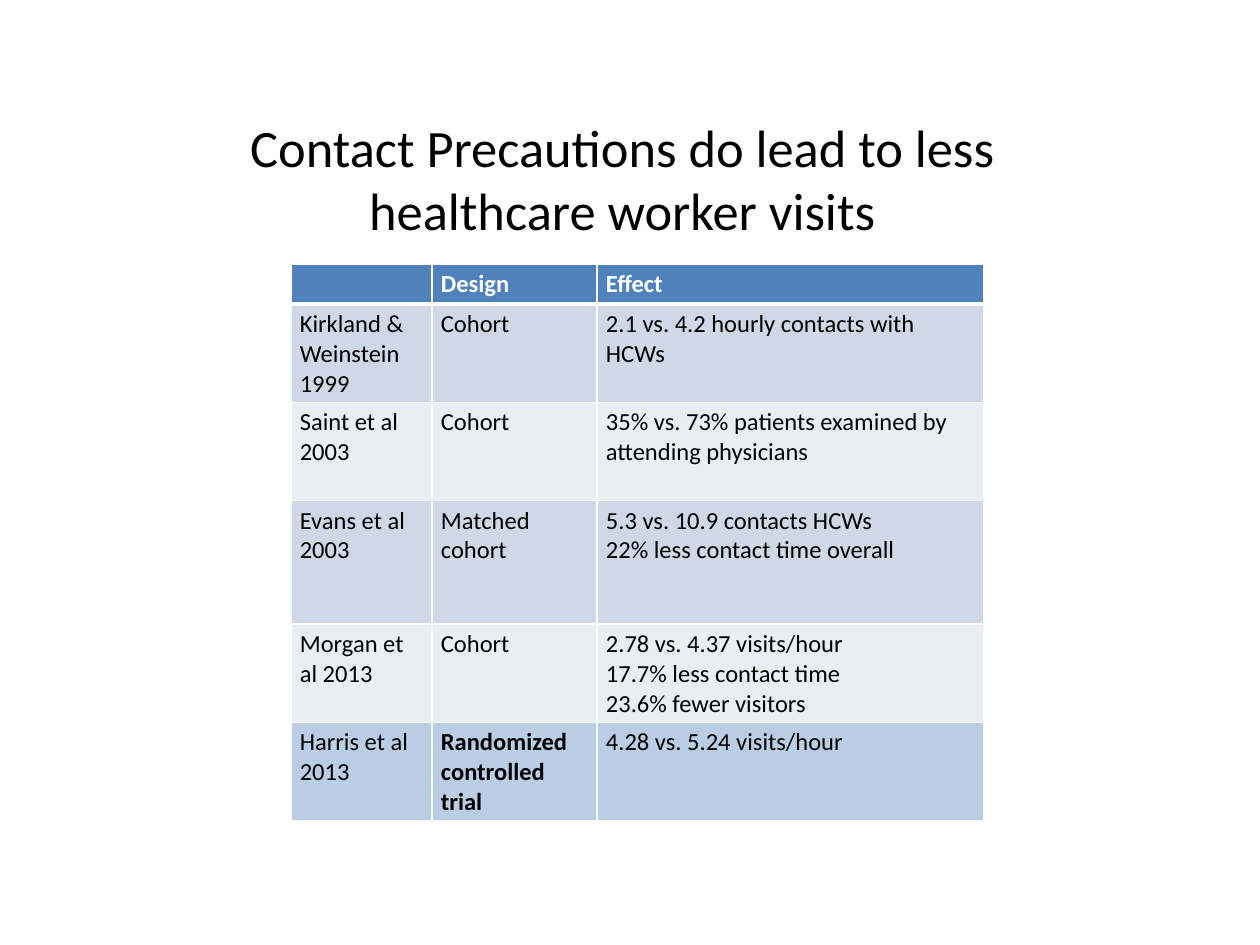
from dataclasses import dataclass

from lxml import etree
from pptx import Presentation
from pptx import util as u
from pptx.dml.color import RGBColor
from pptx.enum import text
from pptx.oxml import ns


@dataclass(frozen=True)
class Theme:
    """Colours, font and type sizes of the slide."""
    font: str = "Calibri"
    title_size: int = 30
    table_size: int = 14
    ink: str = "000000"
    paper: str = "FFFFFF"
    header: str = "4F81BD"
    bands: tuple = ("D0D8E8", "E9EDF4")
    highlight: str = "B9CDE5"


THEME = Theme()
HEADINGS = ("", "Design", "Effect")
STUDIES = (
    ("Kirkland & Weinstein 1999", "Cohort", "2.1 vs. 4.2 hourly contacts with HCWs"),
    ("Saint et al 2003", "Cohort", "35% vs. 73% patients examined by attending physicians"),
    ("Evans et al 2003", "Matched cohort",
     "5.3 vs. 10.9 contacts HCWs\n22% less contact time overall"),
    ("Morgan et al 2013", "Cohort",
     "2.78 vs. 4.37 visits/hour\n17.7% less contact time\n23.6% fewer visitors"),
    ("Harris et al 2013", "Randomized controlled trial", "4.28 vs. 5.24 visits/hour"),
)
COLUMN_WIDTHS = (1.12, 1.31, 3.07)
ROW_HEIGHTS = (0.3, 0.78, 0.78, 0.98, 0.78, 0.78)


def style_paragraph(paragraph, size, color, bold=False):
    """Set the font of a whole paragraph."""
    font = paragraph.font
    font.name, font.size, font.bold = THEME.font, u.Pt(size), bold
    font.color.rgb = RGBColor.from_string(color)
    if not paragraph.runs:
        end = etree.SubElement(paragraph._p, ns.qn("a:endParaRPr"))
        end.set("sz", str(size * 100))


def set_borders(cell, widths):
    """Draw the left, right, top and bottom cell borders, widths in points."""
    properties = cell._tc.get_or_add_tcPr()
    for index, (side, width) in enumerate(zip("LRTB", widths)):
        line = etree.Element(ns.qn(f"a:ln{side}"), w=str(u.Pt(width)))
        fill = etree.SubElement(line, ns.qn("a:solidFill"))
        etree.SubElement(fill, ns.qn("a:srgbClr"), val=THEME.paper)
        properties.insert(index, line)


def fill_cell(cell, content, fill, color, bold, borders):
    """Write and style one table cell."""
    cell.text = content
    cell.margin_left = cell.margin_right = u.Inches(0.07)
    cell.margin_top = cell.margin_bottom = u.Inches(0.04)
    cell.fill.solid()
    cell.fill.fore_color.rgb = RGBColor.from_string(fill)
    set_borders(cell, borders)
    for paragraph in cell.text_frame.paragraphs:
        style_paragraph(paragraph, THEME.table_size, color, bold)


def add_title(slide, box, title):
    """Place the centred title in the box."""
    frame = slide.shapes.add_textbox(*map(u.Inches, box)).text_frame
    frame.word_wrap = True
    frame.vertical_anchor = text.MSO_ANCHOR.MIDDLE
    paragraph = frame.paragraphs[0]
    paragraph.text = title
    paragraph.alignment = text.PP_ALIGN.CENTER
    style_paragraph(paragraph, THEME.title_size, THEME.ink)


def add_study_table(slide, box):
    """Place the table of studies in the box, with the last row highlighted."""
    rows = (HEADINGS, *STUDIES)
    last = len(rows) - 1
    table = slide.shapes.add_table(len(rows), len(HEADINGS), *map(u.Inches, box)).table
    for column, width in zip(table.columns, COLUMN_WIDTHS):
        column.width = u.Inches(width)
    for index, (row, height, values) in enumerate(zip(table.rows, ROW_HEIGHTS, rows)):
        row.height = u.Inches(height)
        is_header = index == 0
        fill = {0: THEME.header, last: THEME.highlight}.get(index, THEME.bands[(index - 1) % 2])
        color = THEME.paper if is_header else THEME.ink
        borders = (1, 1, 3 if index == 1 else 1, 3 if is_header else 1)
        for number, (cell, value) in enumerate(zip(row.cells, values)):
            bold = is_header or (index == last and number == 1)
            fill_cell(cell, value, fill, color, bold, borders)


def main():
    """Build and save the presentation."""
    presentation = Presentation()
    presentation.slide_width, presentation.slide_height = u.Inches(10), u.Inches(7.5)
    slide = presentation.slides.add_slide(presentation.slide_layouts[6])
    add_title(slide, (1.25, 0.94, 7.38, 0.94),
              "Contact Precautions do lead to less healthcare worker visits")
    add_study_table(slide, (2.31, 2.1, sum(COLUMN_WIDTHS), sum(ROW_HEIGHTS)))
    presentation.save("out.pptx")


if __name__ == "__main__":
    main()
